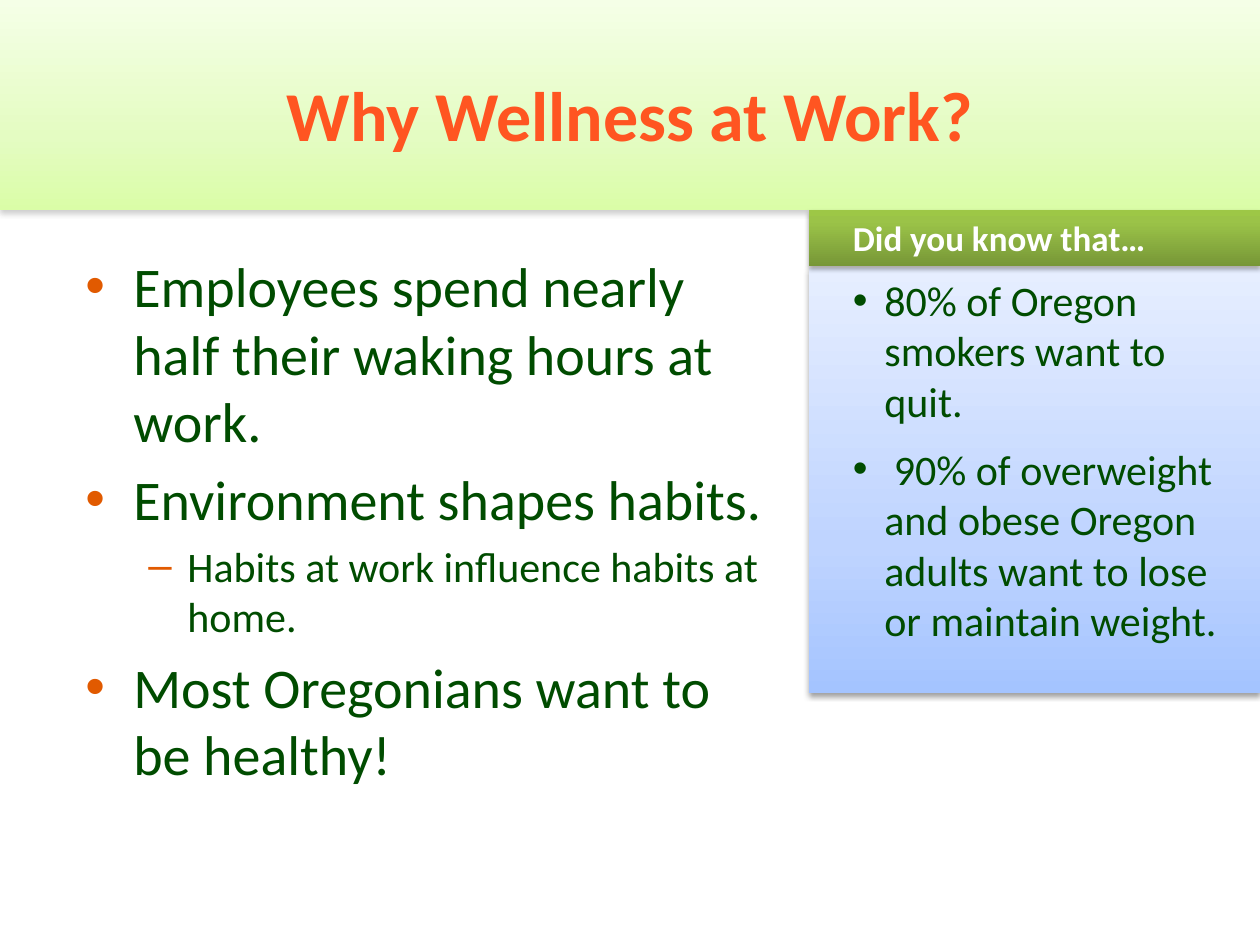
"""Build the "Why Wellness at Work?" slide."""
from lxml import etree
from pptx import Presentation
from pptx.dml.color import RGBColor
from pptx.enum.shapes import MSO_SHAPE
from pptx.enum.text import MSO_ANCHOR, PP_ALIGN
from pptx.oxml.ns import qn
from pptx.util import Inches, Pt

RECT = MSO_SHAPE.RECTANGLE
TOP, MIDDLE = MSO_ANCHOR.TOP, MSO_ANCHOR.MIDDLE
LEFT, CENTER = PP_ALIGN.LEFT, PP_ALIGN.CENTER
FONT = "Calibri"
COLORS = {
    "title": "FF5521", "text": "004C00", "bullet": "E15A00", "white": "FFFFFF",
    "gray": "808080", "black": "000000",
}
FADES = {
    "band": [(0, "DAFDA7"), (35, "E4FCC2"), (100, "F5FFE7")],
    "facts": [(0, "A4C4FF"), (35, "BFD4FF"), (100, "E6EEFF")],
    "head": [(0, "779737"), (80, "9BC348"), (100, "9DC746")],
}


def add_panel(box, fade, shade, alpha):
    panel = slide.shapes.add_shape(RECT, *map(Inches, box))
    panel.fill.gradient()
    panel.fill.gradient_angle = 90
    panel.line.fill.background()
    props = panel.element.spPr
    stops = props.find(".//" + qn("a:gsLst"))
    for stop in list(stops):
        stops.remove(stop)
    for place, color in FADES[fade]:
        stop = etree.SubElement(stops, qn("a:gs"), pos=str(place * 1000))
        etree.SubElement(stop, qn("a:srgbClr"), val=color)
    panel.shadow.inherit = False
    shadow = etree.SubElement(
        props.find(qn("a:effectLst")), qn("a:outerShdw"), blurRad=str(Pt(3.1)),
        dist=str(Pt(1.6)), dir="5400000", rotWithShape="0")
    tint = etree.SubElement(shadow, qn("a:srgbClr"), val=COLORS[shade])
    etree.SubElement(tint, qn("a:alpha"), val=str(alpha * 1000))
    panel.text_frame.word_wrap = True
    panel.text_frame.vertical_anchor = TOP
    return panel


def add_text(para, text, size, color, bold=False, align=LEFT, margin=0, hang=0,
             mark=None, tint=None):
    para.text = text
    para.alignment = align
    props = para._p.get_or_add_pPr()
    props.set("marL", str(Inches(margin)))
    props.set("indent", str(Inches(-hang)))
    if tint:
        shade = etree.SubElement(props, qn("a:buClr"))
        etree.SubElement(shade, qn("a:srgbClr"), val=COLORS[tint])
    if mark:
        etree.SubElement(props, qn("a:buFont"), typeface="Arial")
        etree.SubElement(props, qn("a:buChar"), char=mark)
    font = para.font
    font.name, font.size, font.bold = FONT, Pt(size), bold
    font.color.rgb = RGBColor.from_string(COLORS[color])


prs = Presentation()
prs.slide_width, prs.slide_height = Inches(10), Inches(7.5)
slide = prs.slides.add_slide(prs.slide_layouts[5])

add_panel((0, 0, 10, 1.67), "band", "gray", 38)

title = slide.shapes.title
title.left, title.top = Inches(0.5), Inches(0.3)
title.width, title.height = Inches(9), Inches(1.2)
title.text_frame.vertical_anchor = MIDDLE
add_text(title.text_frame.paragraphs[0], "Why Wellness at Work?", 40, "title",
         bold=True, align=CENTER)
title.element.getparent().append(title.element)

points = [
    ("Employees spend nearly half their waking hours at work.", 0),
    ("Environment shapes habits.", 0),
    ("Habits at work influence habits at home.", 1),
    ("Most Oregonians want to be healthy!", 0),
]
levels = [(32, 0.38, 0.38, "•"), (24, 0.81, 0.31, "–")]
body = slide.shapes.add_textbox(
    Inches(0.58), Inches(1.95), Inches(5.67), Inches(4.47)).text_frame
body.word_wrap = True
for i, (text, level) in enumerate(points):
    size, margin, hang, mark = levels[level]
    para = body.add_paragraph() if i else body.paragraphs[0]
    para.level = level
    if i:
        para.space_before = Pt(size * 0.2)
    add_text(para, text, size, "text", margin=margin, hang=hang, mark=mark,
             tint="bullet")

facts = [
    "80% of Oregon smokers want to quit.",
    " 90% of overweight and obese Oregon adults want to lose or maintain weight.",
]
frame = add_panel((6.42, 2.13, 3.58, 3.37), "facts", "black", 38).text_frame
for i, text in enumerate(facts):
    para = frame.add_paragraph() if i else frame.paragraphs[0]
    para.level = 1
    if i:
        para.space_before = Pt(10)
    add_text(para, text, 24, "text", margin=0.5, hang=0.25, mark="•")

head = add_panel((6.42, 1.67, 3.58, 0.44), "head", "black", 35).text_frame
add_text(head.paragraphs[0], "Did you know that…", 20, "white", bold=True,
         margin=0.25)

prs.save("out.pptx")
